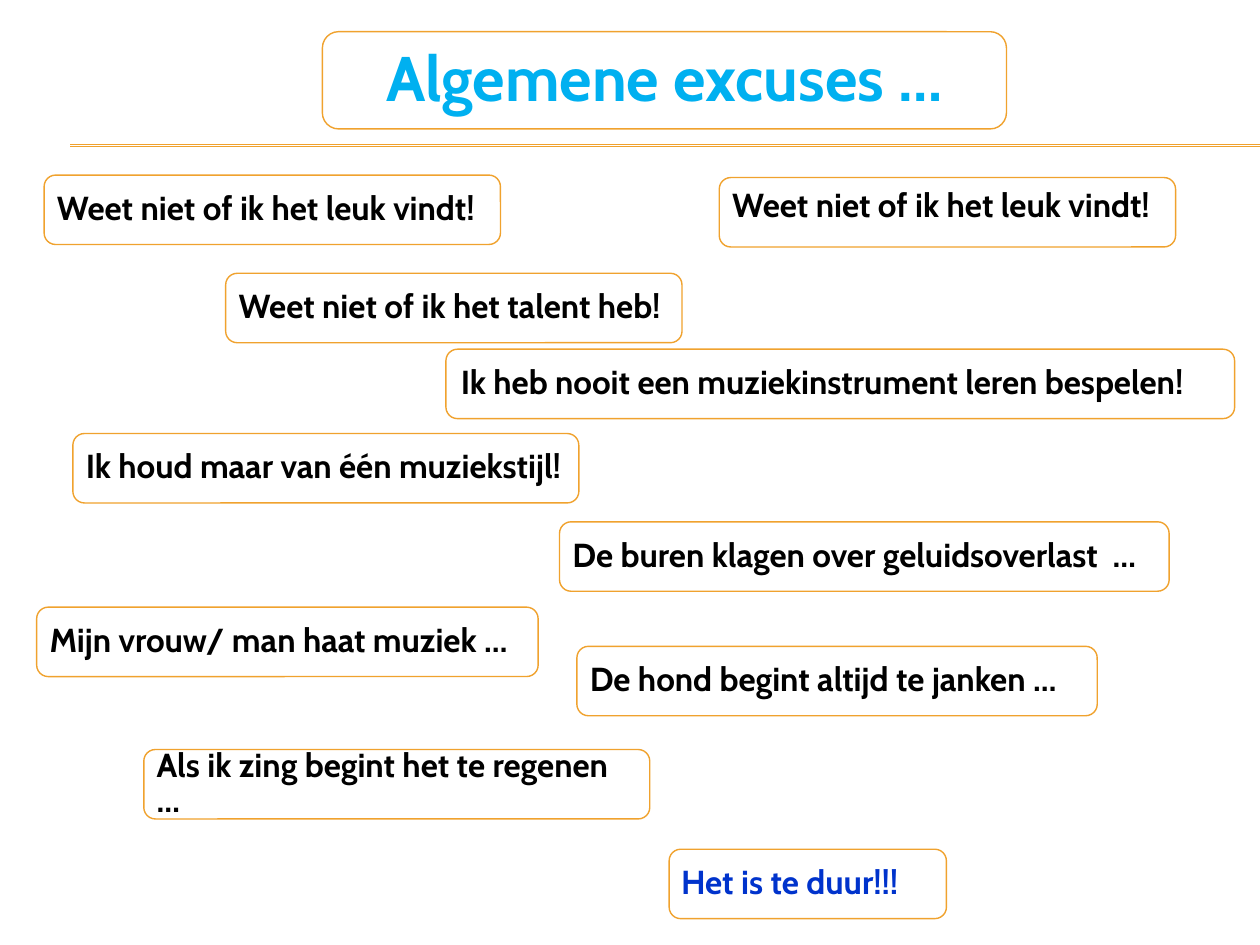
import pptx
import pptx.util
import pptx.dml.color
import pptx.enum.shapes
import pptx.enum.text
import pptx.oxml.ns
import lxml.etree

Cm = pptx.util.Cm
Pt = pptx.util.Pt
GOLD = "F0A22E"
BLACK = "000000"
HIGH = 1.4
GAP = 0.06

# text, left, top, width, text colour, side gap, top gap
CARDS = [
    ("Weet niet of ik het leuk vindt!", 0.89, 3.53, 9.2, BLACK, GAP, GAP),
    ("Weet niet of ik het talent heb!", 4.55, 5.51, 9.2, BLACK, GAP, GAP),
    ("Weet niet of ik het leuk vindt!", 14.5, 3.58, 9.2, BLACK, GAP, -0.05),
    ("Als ik zing begint het te regenen …", 2.9, 15.11, 10.2, BLACK, GAP, GAP),
    ("Ik heb nooit een muziekinstrument leren bespelen!",
     8.99, 7.04, 15.9, BLACK, 0.1, GAP),
    ("Mijn vrouw/ man haat muziek …", 0.74, 12.24, 10.11, BLACK, GAP, GAP),
    ("De hond begint altijd te janken …", 11.63, 13.03, 10.49, BLACK, GAP, GAP),
    ("Ik houd maar van één muziekstijl!", 1.47, 8.74, 10.2, BLACK, GAP, GAP),
    ("De buren klagen over geluidsoverlast  …",
     11.28, 10.52, 12.29, BLACK, GAP, GAP),
    ("Het is te duur!!!", 13.49, 17.12, 5.59, "0033CC", 0.04, GAP),
]


def paint(form, color):
    """Set a solid colour on a fill or a font."""
    form.rgb = pptx.dml.color.RGBColor.from_string(color)


def add_rule(slide, top):
    """Draw one thin line from the left margin to the right edge."""
    kind = pptx.enum.shapes.MSO_CONNECTOR.STRAIGHT
    rule = slide.shapes.add_connector(
        kind, Cm(1.42), Cm(top), Cm(25.4), Cm(top))
    paint(rule.line.color, GOLD)
    rule.line.width = Pt(0.75)
    props = rule._element.spPr
    lxml.etree.SubElement(props, pptx.oxml.ns.qn("a:effectLst"))


def add_frame(slide, left, top, width, high):
    """Draw a rounded frame with a slightly clear white fill."""
    kind = pptx.enum.shapes.MSO_SHAPE.ROUNDED_RECTANGLE
    frame = slide.shapes.add_shape(
        kind, Cm(left), Cm(top), Cm(width), Cm(high))
    frame.shadow.inherit = False
    frame.fill.solid()
    paint(frame.fill.fore_color, "FFFFFF")
    paint(frame.line.color, GOLD)
    frame.line.width = Pt(0.79)
    tint = frame._element.spPr.find(".//" + pptx.oxml.ns.qn("a:srgbClr"))
    alpha = lxml.etree.SubElement(tint, pptx.oxml.ns.qn("a:alpha"))
    alpha.set("val", "90000")


def add_label(slide, text, left, top, width, high, size, color, align):
    """Add a bold line of text, centred in height."""
    box = slide.shapes.add_textbox(Cm(left), Cm(top), Cm(width), Cm(high))
    body = box.text_frame
    body.word_wrap = True
    body.vertical_anchor = pptx.enum.text.MSO_ANCHOR.MIDDLE
    body.margin_left = body.margin_right = Cm(0.2)
    body.margin_top = body.margin_bottom = Cm(0.2)
    para = body.paragraphs[0]
    para.alignment = align
    para.line_spacing = 0.9
    run = para.add_run()
    run.text = text
    run.font.name = "Cabin"
    run.font.size = Pt(size)
    run.font.bold = True
    paint(run.font.color, color)


def add_card(slide, text, left, top, width, color, side, drop):
    """Add one excuse: a frame and its text."""
    add_frame(slide, left, top, width, HIGH)
    add_label(slide, text, left + side, top + drop, width - 2 * side,
              HIGH - 2 * GAP, 19, color, pptx.enum.text.PP_ALIGN.LEFT)


def main():
    """Build the slide and save it."""
    deck = pptx.Presentation()
    deck.slide_width = Cm(25.4)
    deck.slide_height = Cm(19.05)
    slide = deck.slides.add_slide(deck.slide_layouts[6])
    for top in (2.92, 2.95):
        add_rule(slide, top)
    add_frame(slide, 6.5, 0.64, 13.79, 1.96)
    add_label(slide, "Algemene excuses …", 6.58, 0.74, 13.64, 1.78,
              36, "00B0F0", pptx.enum.text.PP_ALIGN.CENTER)
    for card in CARDS:
        add_card(slide, *card)
    deck.save("out.pptx")


main()
